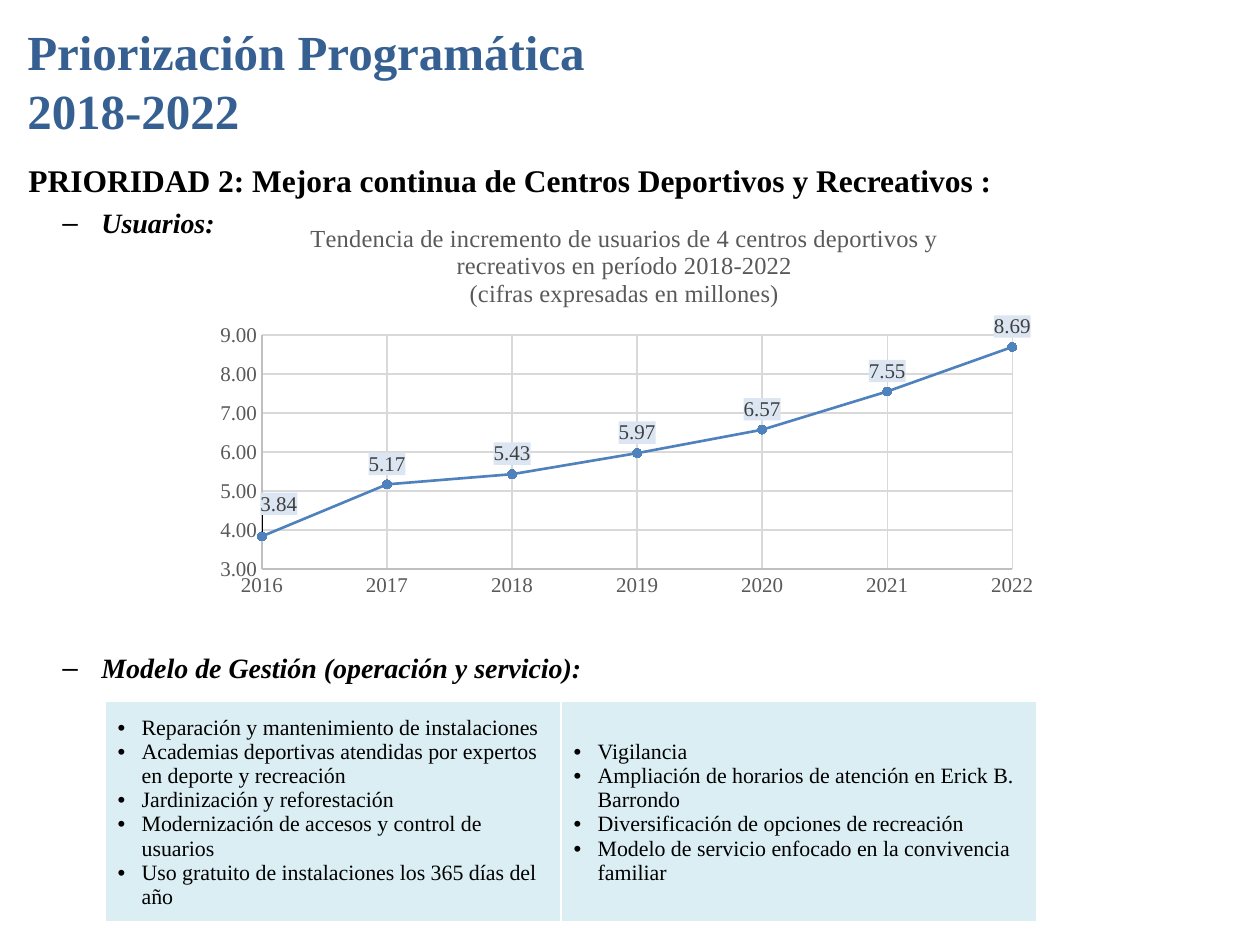
import copy

import lxml.etree
import pptx
import pptx.chart.data
import pptx.chart.datalabel
import pptx.dml.color
import pptx.enum.chart
import pptx.enum.text
import pptx.oxml
import pptx.oxml.ns
import pptx.util

RGB = pptx.dml.color.RGBColor
BLUE = RGB(0x37, 0x60, 0x92)
BLACK = RGB(0, 0, 0)
WHITE = RGB(0xFF, 0xFF, 0xFF)
PALE = RGB(0xDB, 0xEE, 0xF4)
GREY = RGB(0x59, 0x59, 0x59)
DARK = RGB(0x40, 0x40, 0x40)
AXIS = RGB(0xBF, 0xBF, 0xBF)
GRID = RGB(0xD9, 0xD9, 0xD9)
LINE = RGB(0x4F, 0x81, 0xBD)
TAG = RGB(0xDC, 0xE6, 0xF2)
FONT = "Times New Roman"
DPI = 126
Pt = pptx.util.Pt
qn = pptx.oxml.ns.qn
ANCHOR = pptx.enum.text.MSO_ANCHOR
ALIGN = pptx.enum.text.PP_ALIGN

USERS = {2016: 3.84, 2017: 5.17, 2018: 5.43, 2019: 5.97,
         2020: 6.57, 2021: 7.55, 2022: 8.69}
MODEL = [
    ["Reparación y mantenimiento de instalaciones",
     "Academias deportivas atendidas por expertos en deporte y recreación",
     "Jardinización y reforestación",
     "Modernización de accesos y control de usuarios",
     "Uso gratuito de instalaciones los 365 días del año"],
    ["Vigilancia",
     "Ampliación de horarios de atención en Erick B. Barrondo",
     "Diversificación de opciones de recreación",
     "Modelo de servicio enfocado en la convivencia familiar"],
]


def px(num):
    return round(num * 914400 / DPI)


def style(font, size, color, bold=False, italic=False):
    font.name, font.size = FONT, Pt(size)
    font.bold, font.italic = bold, italic
    font.color.rgb = color


def write(frame, text, size=16, color=BLACK, bold=False, italic=False,
          align=None, bullet=None, left=0, hang=0, before=0):
    """Put text in the empty first paragraph of a frame, or in a new one."""
    para = frame.paragraphs[0]
    if para.text:
        para = frame.add_paragraph()
    para.text = text
    if align is not None:
        para.alignment = align
    if before:
        para.space_before = Pt(before)
    if bullet:
        props = para._p.get_or_add_pPr()
        props.set("marL", str(px(left)))
        props.set("indent", str(-px(hang)))
        lxml.etree.SubElement(props, qn("a:buFont")).set("typeface", "Arial")
        lxml.etree.SubElement(props, qn("a:buChar")).set("char", bullet)
    for run in para.runs:
        style(run.font, size, color, bold, italic)


def add_box(slide, box, anchor=ANCHOR.TOP):
    frame = slide.shapes.add_textbox(*map(px, box)).text_frame
    frame.word_wrap = True
    frame.vertical_anchor = anchor
    return frame


def add_title(slide, box):
    frame = add_box(slide, box, ANCHOR.MIDDLE)
    write(frame, "Priorización Programática\v2018-2022", size=28,
          color=BLUE, bold=True)


def add_body(slide, box):
    frame = add_box(slide, box)
    write(frame, "PRIORIDAD 2: Mejora continua de Centros Deportivos y Recreativos :",
          size=18, bold=True, align=ALIGN.JUSTIFY)
    for text, gap in (("Usuarios:", 4),
                      ("Modelo de Gestión (operación y servicio):", 235)):
        write(frame, text, bold=True, italic=True, align=ALIGN.JUSTIFY,
              bullet="–", left=73, hang=39, before=gap)


def set_axis(axis, low, high, step, form):
    axis.minimum_scale, axis.maximum_scale = low, high
    axis.major_unit = step
    axis.major_tick_mark = pptx.enum.chart.XL_TICK_MARK.NONE
    axis.has_major_gridlines = True
    for line, color in ((axis.format.line, AXIS),
                        (axis.major_gridlines.format.line, GRID)):
        line.color.rgb = color
        line.width = Pt(0.75)
    labels = axis.tick_labels
    labels.number_format, labels.number_format_is_linked = form, False
    style(labels.font, 12, GREY)


def layout(box, inner=False):
    """Manual layout from x, y and, for the plot, width and height."""
    keys = zip("xywh", box)
    head = ""
    if inner:
        head = ('<c:layoutTarget val="inner"/>'
                '<c:xMode val="edge"/><c:yMode val="edge"/>')
    parts = "".join(f'<c:{key} val="{val}"/>' for key, val in keys)
    return pptx.oxml.parse_xml(
        f'<c:layout {pptx.oxml.ns.nsdecls("c")}><c:manualLayout>'
        f'{head}{parts}</c:manualLayout></c:layout>')


def set_labels(series):
    root = series._element.get_or_add_dLbls()
    labels = pptx.chart.datalabel.DataLabels(root)
    labels.show_value = True
    labels.position = pptx.enum.chart.XL_LABEL_POSITION.ABOVE
    labels.number_format, labels.number_format_is_linked = "0.00", False
    style(labels.font, 12, DARK)
    root.find(qn("c:numFmt")).addnext(pptx.oxml.parse_xml(
        f'<c:spPr {pptx.oxml.ns.nsdecls("c", "a")}><a:solidFill>'
        f'<a:srgbClr val="{TAG}"/></a:solidFill></c:spPr>'))
    # The first label moves right, clear of the value axis
    first = root.makeelement(qn("c:dLbl"))
    lxml.etree.SubElement(first, qn("c:idx")).set("val", "0")
    first.append(layout((0.02, -0.03)))
    for part in root:
        if part.tag != qn("c:showLeaderLines"):
            first.append(copy.deepcopy(part))
    root.insert(0, first)


def add_trend(slide, box):
    data = pptx.chart.data.XyChartData()
    rows = data.add_series("Series 1")
    for year, count in USERS.items():
        rows.add_data_point(year, count)
    kind = pptx.enum.chart.XL_CHART_TYPE.XY_SCATTER_LINES
    chart = slide.shapes.add_chart(kind, *map(px, box), data).chart
    style(chart.font, 12, BLACK)
    chart.has_legend = False
    chart.has_title = True
    frame = chart.chart_title.text_frame
    for text in ("Tendencia de incremento de usuarios de 4 centros deportivos y "
                 "recreativos en período 2018-2022",
                 "(cifras expresadas en millones)"):
        write(frame, text, size=14, color=GREY)
    chart.chart_title.include_in_layout = False

    set_axis(chart.category_axis, 2016, 2022, 1, "0")
    set_axis(chart.value_axis, 3, 9, 1, "0.00")
    plot = chart.plots[0]
    plot.vary_by_categories = False
    series = plot.series[0]
    series.format.line.color.rgb = LINE
    series.format.line.width = Pt(1.5)
    mark = series.marker
    mark.style, mark.size = pptx.enum.chart.XL_MARKER_STYLE.CIRCLE, 5
    mark.format.fill.solid()
    mark.format.fill.fore_color.rgb = LINE
    mark.format.line.color.rgb = LINE
    set_labels(series)

    area = chart._chartSpace.chart.plotArea
    for old in area.findall(qn("c:layout")):
        area.remove(old)
    area.insert(0, layout((0.07, 0.33, 0.89, 0.59), inner=True))


def set_edges(cell):
    props = cell._tc.get_or_add_tcPr()
    for spot, (side, width) in enumerate(
            (("lnL", 1), ("lnR", 1), ("lnT", 1), ("lnB", 3))):
        props.insert(spot, pptx.oxml.parse_xml(
            f'<a:{side} {pptx.oxml.ns.nsdecls("a")} w="{Pt(width)}"><a:solidFill>'
            f'<a:srgbClr val="{WHITE}"/></a:solidFill></a:{side}>'))


def add_model(slide, box, widths):
    table = slide.shapes.add_table(1, len(widths), *map(px, box)).table
    table.first_row = table.horz_banding = False
    for col, (width, items) in enumerate(zip(widths, MODEL)):
        table.columns[col].width = px(width)
        cell = table.cell(0, col)
        cell.vertical_anchor = ANCHOR.MIDDLE
        cell.fill.solid()
        cell.fill.fore_color.rgb = PALE
        set_edges(cell)
        for item in items:
            write(cell.text_frame, item, size=12.5, bullet="•",
                  left=24, hang=24)


def main():
    deck = pptx.Presentation()
    deck.slide_width, deck.slide_height = px(1260), px(945)
    slide = deck.slides.add_slide(deck.slide_layouts[6])
    add_title(slide, (15, 16, 656, 129))
    add_body(slide, (16, 155, 1101, 770))
    add_model(slide, (105, 701, 932, 204), (456, 476))
    add_trend(slide, (203, 204, 843, 397))
    deck.save("out.pptx")


if __name__ == "__main__":
    main()
